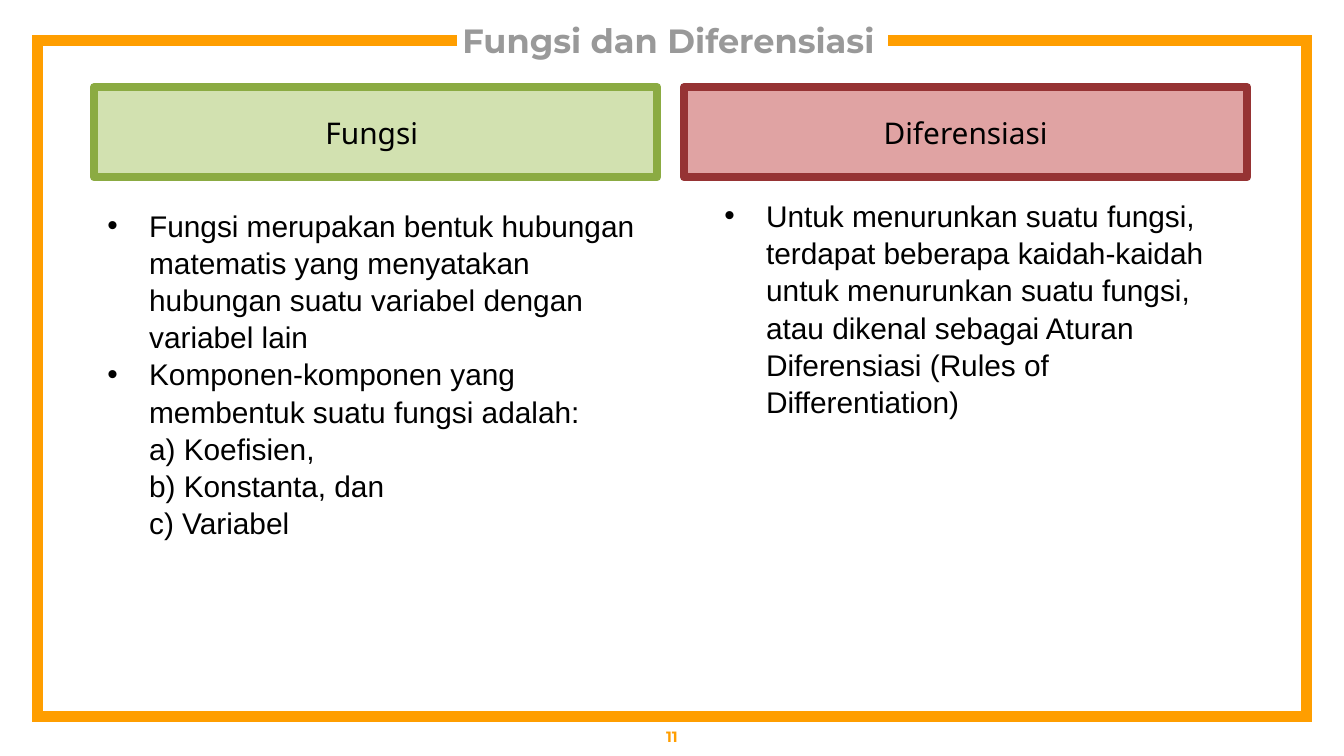
"""Build the slide on functions and differentiation."""
import pptx
import pptx.util
import pptx.dml.color
import pptx.enum.shapes
import pptx.enum.text
import pptx.oxml.ns
from lxml import etree

Cm = pptx.util.Cm
Pt = pptx.util.Pt
RGBColor = pptx.dml.color.RGBColor
Align = pptx.enum.text.PP_ALIGN
Anchor = pptx.enum.text.MSO_ANCHOR

ORANGE = RGBColor(0xFF, 0x9E, 0x00)
GRAY = RGBColor(0x99, 0x99, 0x99)
BLACK = RGBColor(0, 0, 0)
GREEN, PALE_GREEN = RGBColor(0x8B, 0xAB, 0x42), RGBColor(0xD2, 0xE1, 0xB0)
RED, PALE_RED = RGBColor(0x96, 0x33, 0x34), RGBColor(0xE0, 0xA3, 0xA3)

TITLE = "Fungsi dan Diferensiasi "
PAGE = "11"
COLUMNS = [
    {
        "heading": "Fungsi ", "fill": PALE_GREEN, "line": GREEN,
        "body": (1.78, 3.76, 10.64, 6.4),
        "points": [
            ("•", "Fungsi merupakan bentuk hubungan matematis yang menyatakan "
                  "hubungan suatu variabel dengan variabel lain"),
            ("•", "Komponen-komponen yang membentuk suatu fungsi adalah:"),
            ("", "a) Koefisien,"),
            ("", "b) Konstanta, dan"),
            ("", "c) Variabel"),
        ],
    },
    {
        "heading": "Diferensiasi", "fill": PALE_RED, "line": RED,
        "body": (13.44, 3.58, 9.63, 4.37),
        "points": [
            ("•", "Untuk menurunkan suatu fungsi, terdapat beberapa kaidah-kaidah "
                  "untuk menurunkan suatu fungsi, atau dikenal sebagai Aturan "
                  "Diferensiasi (Rules of Differentiation)"),
        ],
    },
]
FRAME = [(8.64, 0.76), (0.71, 0.76), (0.71, 13.54),
         (24.69, 13.54), (24.69, 0.76), (16.79, 0.76)]
HEADING_LEFT, HEADING_TOP, HEADING_WIDTH, HEADING_HEIGHT = 1.78, 1.65, 10.64, 1.7
HEADING_GAP = 0.51
INDENT = 0.79


def place(shape, *box):
    shape.left, shape.top, shape.width, shape.height = map(Cm, box)


def set_frame(frame, anchor, margin_x, margin_y):
    frame.word_wrap = True
    frame.auto_size = pptx.enum.text.MSO_AUTO_SIZE.NONE
    frame.vertical_anchor = anchor
    frame.margin_left = frame.margin_right = Cm(margin_x)
    frame.margin_top = frame.margin_bottom = Cm(margin_y)


def write(paragraph, text, font, size, color, bold=False, align=Align.CENTER):
    paragraph.alignment = align
    run = paragraph.add_run()
    run.text = text
    run.font.name, run.font.size, run.font.bold = font, Pt(size), bold
    run.font.color.rgb = color


def indent(paragraph, bullet):
    properties = paragraph._p.get_or_add_pPr()
    properties.set("marL", str(Cm(INDENT)))
    properties.set("indent", str(-Cm(INDENT) if bullet else 0))
    if bullet:
        qn = pptx.oxml.ns.qn
        etree.SubElement(properties, qn("a:buFont")).set("typeface", "Arial")
        etree.SubElement(properties, qn("a:buChar")).set("char", bullet)


def add_border(slide):
    start, *corners = [(Cm(x), Cm(y)) for x, y in FRAME]
    builder = slide.shapes.build_freeform(*start)
    builder.add_line_segments(corners, close=False)
    border = builder.convert_to_shape()
    border.shadow.inherit = False
    border.fill.background()
    border.line.color.rgb = ORANGE
    border.line.width = Pt(6)
    miter = etree.SubElement(border.line._get_or_add_ln(), pptx.oxml.ns.qn("a:miter"))
    miter.set("lim", "800000")


def add_column(slide, number, column):
    left = HEADING_LEFT + number * (HEADING_WIDTH + HEADING_GAP)
    heading = slide.shapes.add_shape(pptx.enum.shapes.MSO_SHAPE.RECTANGLE, 0, 0, 0, 0)
    place(heading, left, HEADING_TOP, HEADING_WIDTH, HEADING_HEIGHT)
    heading.shadow.inherit = False
    heading.fill.solid()
    heading.fill.fore_color.rgb = column["fill"]
    heading.line.color.rgb = column["line"]
    heading.line.width = Pt(4.5)
    set_frame(heading.text_frame, Anchor.MIDDLE, 0.25, 0.13)
    write(heading.text_frame.paragraphs[0], column["heading"], "Noto Sans", 16, BLACK)

    body = slide.shapes.add_textbox(*map(Cm, column["body"])).text_frame
    set_frame(body, Anchor.TOP, 0.25, 0.13)
    for index, (bullet, text) in enumerate(column["points"]):
        point = body.add_paragraph() if index else body.paragraphs[0]
        indent(point, bullet)
        point.line_spacing = 1.04
        write(point, text, "Arial", 16, BLACK, align=Align.LEFT)


def main():
    deck = pptx.Presentation()
    deck.slide_width, deck.slide_height = Cm(25.4), Cm(14.29)
    slide = deck.slides.add_slide(deck.slide_layouts[5])
    add_border(slide)

    title = slide.shapes.title
    place(title, 8.33, 0.13, 8.79, 2.03)
    set_frame(title.text_frame, Anchor.TOP, 0.25, 0.25)
    write(title.text_frame.paragraphs[0], TITLE, "Montserrat", 18, GRAY, bold=True)

    page = slide.shapes.add_textbox(*map(Cm, (0, 13.54, 25.4, 0.75))).text_frame
    set_frame(page, Anchor.MIDDLE, 0.25, 0.25)
    write(page.paragraphs[0], PAGE, "Montserrat", 8, ORANGE, bold=True)

    for number, column in enumerate(COLUMNS):
        add_column(slide, number, column)
    deck.save("out.pptx")


if __name__ == "__main__":
    main()
